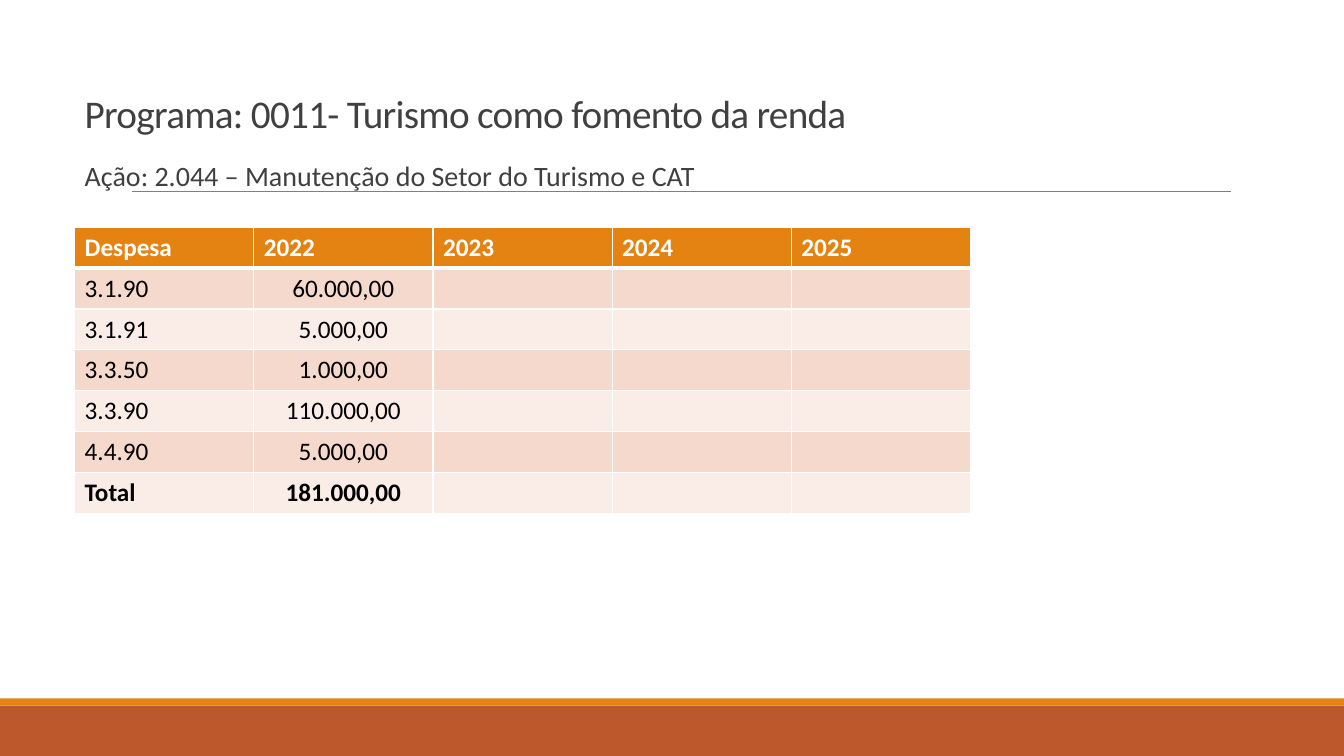
from lxml.etree import SubElement
from pptx import Presentation
from pptx.dml.color import RGBColor
from pptx.enum.shapes import MSO_CONNECTOR, MSO_SHAPE
from pptx.enum.text import MSO_ANCHOR, MSO_AUTO_SIZE, PP_ALIGN
from pptx.oxml.ns import qn
from pptx.util import Pt

ORANGE = RGBColor(0xE4, 0x83, 0x12)
RUST = RGBColor(0xBD, 0x58, 0x2C)
GRAY = RGBColor(0x80, 0x80, 0x80)
DARK = RGBColor(0x40, 0x40, 0x40)
BLACK = RGBColor(0, 0, 0)
WHITE = RGBColor(0xFF, 0xFF, 0xFF)
BAND_DARK = RGBColor(0xF5, 0xD9, 0xCC)
BAND_LIGHT = RGBColor(0xFA, 0xED, 0xE7)

BUDGET = [
    ("Despesa", "2022", "2023", "2024", "2025"),
    ("3.1.90", "60.000,00", "", "", ""),
    ("3.1.91", "5.000,00", "", "", ""),
    ("3.3.50", "1.000,00", "", "", ""),
    ("3.3.90", "110.000,00", "", "", ""),
    ("4.4.90", "5.000,00", "", "", ""),
    ("Total", "181.000,00", "", "", ""),
]


class SlideBuilder:
    """Draws styled elements on one slide, with lengths in points."""

    def __init__(self, slide, font="Calibri"):
        self.slide = slide
        self.font = font

    def add_run(self, paragraph, text, size, color, bold=False):
        run = paragraph.add_run()
        run.text = text
        run.font.name = self.font
        run.font.size = Pt(size)
        run.font.bold = bold
        run.font.color.rgb = color
        return run

    def add_bar(self, top, height, color):
        shape = self.slide.shapes.add_shape(
            MSO_SHAPE.RECTANGLE, Pt(0), Pt(top), Pt(960), Pt(height))
        shape.shadow.inherit = False
        shape.fill.solid()
        shape.fill.fore_color.rgb = color
        shape.line.fill.background()

    def add_rule(self, left, right, top):
        connector = self.slide.shapes.add_connector(
            MSO_CONNECTOR.STRAIGHT, Pt(left), Pt(top), Pt(right), Pt(top))
        connector.line.color.rgb = GRAY
        connector.line.width = Pt(0.5)
        SubElement(connector._element.spPr, qn("a:effectLst"))

    def set_title(self, text, left, top, width, height):
        title = self.slide.shapes.title
        title.left, title.top = Pt(left), Pt(top)
        title.width, title.height = Pt(width), Pt(height)
        frame = title.text_frame
        frame.auto_size = MSO_AUTO_SIZE.NONE
        frame.vertical_anchor = MSO_ANCHOR.BOTTOM
        paragraph = frame.paragraphs[0]
        paragraph.alignment = PP_ALIGN.LEFT
        paragraph.line_spacing = 0.85
        run = self.add_run(paragraph, text, 28, DARK)
        run.font._element.set("spc", "-50")

    def add_body(self, text, left, top, width, height):
        box = self.slide.shapes.add_textbox(Pt(left), Pt(top), Pt(width), Pt(height))
        frame = box.text_frame
        frame.word_wrap = True
        frame.margin_left = frame.margin_right = Pt(0)
        paragraph = frame.paragraphs[0]
        paragraph.line_spacing = 0.9
        paragraph.space_before = Pt(12)
        paragraph.space_after = Pt(2)
        properties = paragraph._p.get_or_add_pPr()
        properties.set("marL", str(Pt(7.2)))
        properties.set("indent", str(-Pt(7.2)))
        bullet_color = SubElement(properties, qn("a:buClr"))
        SubElement(bullet_color, qn("a:srgbClr"), val=str(ORANGE))
        SubElement(properties, qn("a:buFont"), typeface=self.font)
        SubElement(properties, qn("a:buChar"), char=" ")
        self.add_run(paragraph, text, 20, DARK)

    def set_borders(self, cell, top, bottom):
        properties = cell._tc.get_or_add_tcPr()
        widths = {"lnL": 1, "lnR": 1, "lnT": top, "lnB": bottom}
        for position, (side, width) in enumerate(widths.items()):
            line = SubElement(properties, qn(f"a:{side}"), w=str(Pt(width)))
            fill = SubElement(line, qn("a:solidFill"))
            SubElement(fill, qn("a:srgbClr"), val=str(WHITE))
            properties.insert(position, line)

    def add_budget_table(self, rows, left, top, column_width, row_height):
        column_count = len(rows[0])
        table = self.slide.shapes.add_table(
            len(rows), column_count, Pt(left), Pt(top),
            Pt(column_width * column_count), Pt(row_height * len(rows))).table
        for row_index, values in enumerate(rows):
            table.rows[row_index].height = Pt(row_height)
            header = row_index == 0
            bold = header or row_index == len(rows) - 1
            band = BAND_DARK if row_index % 2 else BAND_LIGHT
            for column_index, value in enumerate(values):
                cell = table.cell(row_index, column_index)
                cell.fill.solid()
                cell.fill.fore_color.rgb = ORANGE if header else band
                self.set_borders(cell, 3 if row_index == 1 else 1, 3 if header else 1)
                if value:
                    paragraph = cell.text_frame.paragraphs[0]
                    if column_index and not header:
                        paragraph.alignment = PP_ALIGN.CENTER
                    self.add_run(paragraph, value, 18, WHITE if header else BLACK, bold)


def main():
    presentation = Presentation()
    presentation.slide_width = Pt(960)
    presentation.slide_height = Pt(540)
    builder = SlideBuilder(presentation.slides.add_slide(presentation.slide_layouts[5]))
    builder.add_bar(504, 36, RUST)
    builder.add_bar(498.9, 5.1, ORANGE)
    builder.add_rule(94.3, 879, 136.8)
    builder.set_title("Programa: 0011- Turismo como fomento da renda", 53.3, 48.2, 677, 53.3)
    builder.add_body("Ação: 2.044 – Manutenção do Setor do Turismo e CAT", 53.3, 112.3, 677, 363)
    builder.add_budget_table(BUDGET, 53.3, 162.3, 128, 29.2)
    presentation.save("out.pptx")


if __name__ == "__main__":
    main()
